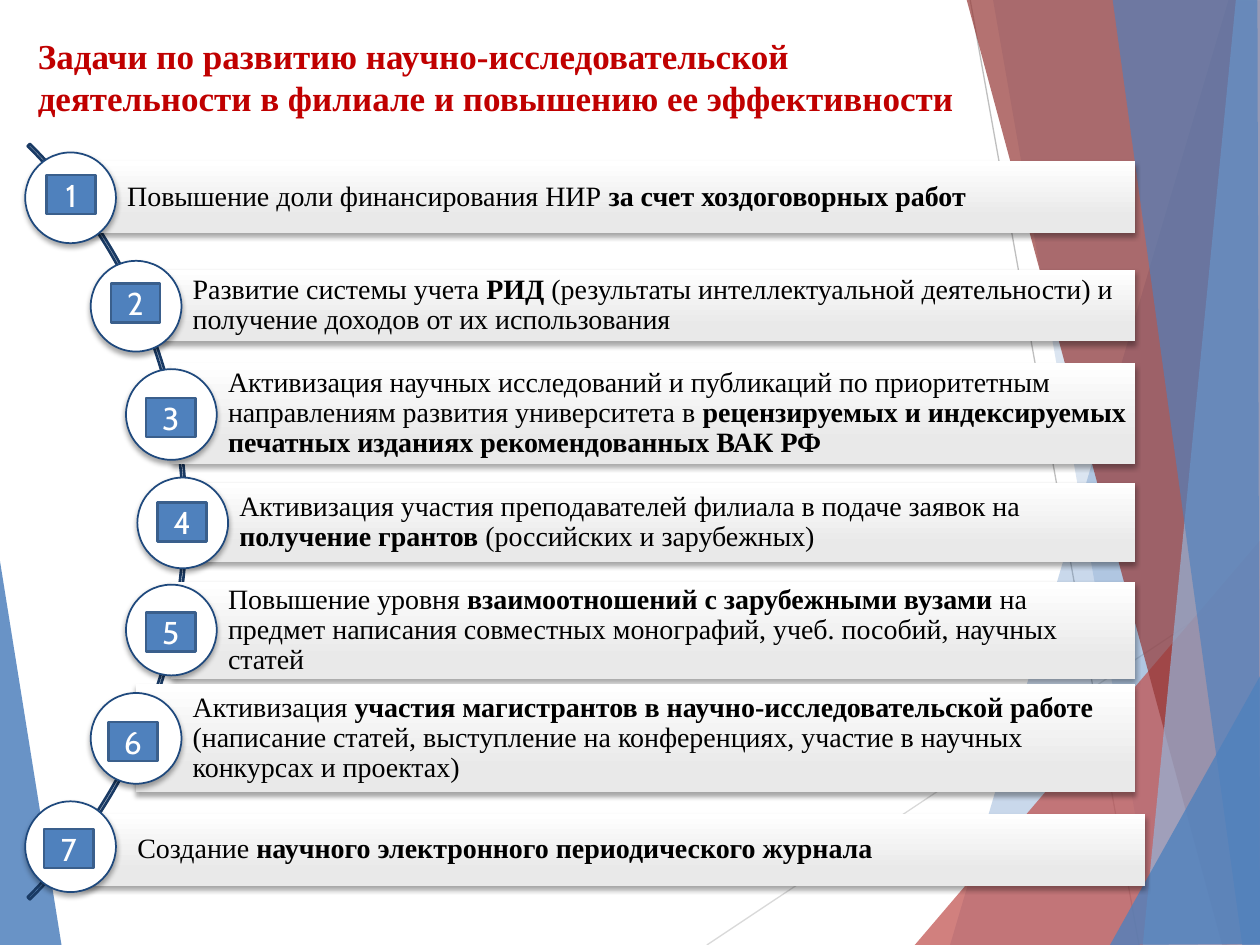
from dataclasses import dataclass

from lxml import etree
from pptx import Presentation
from pptx import util as u
from pptx.dml.color import RGBColor
from pptx.enum import shapes, text
from pptx.oxml import ns

PX = 9144  # EMU per px, 100 px to the inch

WHITE = RGBColor(0xFF, 0xFF, 0xFF)
BLACK = RGBColor(0x00, 0x00, 0x00)
BLUE = RGBColor(0x4F, 0x81, 0xBD)
PALE_BLUE = RGBColor(0x95, 0xB3, 0xD7)
RED = RGBColor(0xC0, 0x50, 0x4D)
DARK_RED = RGBColor(0x95, 0x37, 0x35)
TITLE_RED = RGBColor(0xC0, 0x00, 0x00)
ARC_NAVY = RGBColor(0x19, 0x3A, 0x64)
RING_NAVY = RGBColor(0x1F, 0x49, 0x7D)
BADGE_EDGE = RGBColor(0x3A, 0x5F, 0x8C)
BAR_GREY = RGBColor(0xE9, 0xE9, 0xE9)
RAY_LIGHT = RGBColor(0xD9, 0xD9, 0xD9)
RAY_GREY = RGBColor(0xBF, 0xBF, 0xBF)

SERIF = "Times New Roman"
RING = 72
BADGE_W, BADGE_H = 39, 31


@dataclass(frozen=True)
class Facet:
    color: RGBColor
    opacity: int
    points: tuple[tuple[int, int], ...]


@dataclass(frozen=True)
class Ray:
    start: tuple[int, int]
    end: tuple[int, int]
    color: RGBColor


@dataclass(frozen=True)
class Task:
    ring_left: int
    bar: tuple[int, int, int, int]
    badge: tuple[int, int]
    wording: tuple[str, ...]  # plain and bold by turns


LEFT_FACET = Facet(BLUE, 85, ((-1, 439), (49, 751), (-1, 750)))
RAYS = (
    Ray((561, 750), (1001, 457), RAY_LIGHT),
    Ray((770, 0), (904, 750), RAY_GREY),
)
RIGHT_FACETS = (
    Facet(BLUE, 30, ((975, 0), (754, 750), (1002, 751), (1001, 1))),
    Facet(BLUE, 20, ((788, -1), (919, 750), (1001, 750), (1001, -1))),
    Facet(RED, 72, ((726, 750), (1000, 429), (1001, 750))),
    Facet(DARK_RED, 70, ((767, -1), (970, 750), (1001, 749), (1001, -1))),
    Facet(PALE_BLUE, 70, ((981, -1), (907, 750), (1001, 750), (1000, -1))),
    Facet(BLUE, 65, ((883, -1), (986, 750), (1000, 750), (998, -1))),
    Facet(BLUE, 80, ((881, 750), (1001, 535), (1001, 749))),
)
TASKS = (
    Task(20, (56, 128, 845, 57), (37, 139),
         ("Повышение доли финансирования НИР ", "за счет хоздоговорных работ")),
    Task(72, (108, 214, 793, 57), (88, 225),
         ("Развитие системы учета ", "РИД",
          " (результаты интеллектуальной деятельности) и получение доходов от их использования")),
    Task(100, (136, 288, 765, 80), (116, 316),
         ("Активизация научных исследований и публикаций по приоритетным "
          "направлениям развития университета в ",
          "рецензируемых и индексируемых печатных изданиях рекомендованных ВАК РФ")),
    Task(109, (145, 383, 756, 63), (125, 399),
         ("Активизация участия преподавателей филиала в подаче заявок на ",
          "получение грантов ", "(российских и зарубежных)")),
    Task(100, (136, 462, 765, 77), (116, 486),
         ("Повышение уровня ", "взаимоотношений с зарубежными вузами ",
          "на предмет написания совместных монографий, учеб. пособий, научных статей")),
    Task(72, (108, 543, 793, 86), (86, 573),
         ("Активизация ", "участия магистрантов в научно-исследовательской работе ",
          "(написание статей, выступление на конференциях, участие в научных "
          "конкурсах и проектах)")),
    Task(20, (64, 646, 845, 57), (35, 658),
         ("Создание ", "научного электронного периодического журнала")),
)


def set_all(target, **values) -> None:
    for name, value in values.items():
        setattr(target, name, value)


def set_font(font, color: RGBColor, **values) -> None:
    set_all(font, **values)
    font.color.rgb = color


def paint(shape, fill: RGBColor, edge: RGBColor, width: float) -> None:
    shape.fill.solid()
    shape.fill.fore_color.rgb = fill
    shape.line.color.rgb = edge
    shape.line.width = u.Pt(width)


def add_preset(slide, kind, left: int, top: int, width: int, height: int):
    shape = slide.shapes.add_shape(kind, *(v * PX for v in (left, top, width, height)))
    shape.shadow.inherit = False
    return shape


def drop_shadow(shape) -> None:
    effects = shape.fill._xPr.find(ns.qn("a:effectLst"))
    shadow = etree.SubElement(effects, ns.qn("a:outerShdw"), blurRad=str(u.Pt(3)),
                              dist=str(u.Pt(2)), dir="5400000", rotWithShape="0")
    color = etree.SubElement(shadow, ns.qn("a:srgbClr"), val=str(BLACK))
    etree.SubElement(color, ns.qn("a:alpha"), val="35000")


def add_facet(slide, facet: Facet) -> None:
    builder = slide.shapes.build_freeform(*facet.points[0], scale=PX)
    builder.add_line_segments(facet.points[1:], close=True)
    shape = builder.convert_to_shape()
    shape.shadow.inherit = False
    shape.fill.solid()
    shape.fill.fore_color.rgb = facet.color
    shape.line.fill.background()
    color = shape.fill._xPr.find(ns.qn("a:solidFill"))[0]
    etree.SubElement(color, ns.qn("a:alpha"), val=str(facet.opacity * 1000))


def add_ray(slide, ray: Ray) -> None:
    line = slide.shapes.add_connector(shapes.MSO_CONNECTOR.STRAIGHT,
                                      *(v * PX for v in ray.start + ray.end))
    line.line.color.rgb = ray.color
    line.line.width = u.Pt(0.75)
    etree.SubElement(line._element.spPr, ns.qn("a:effectLst"))


def add_bar(slide, task: Task) -> None:
    bar = add_preset(slide, shapes.MSO_SHAPE.RECTANGLE, *task.bar)
    bar.fill.gradient()
    bar.fill.gradient_angle = 270
    for stop, color, position in zip(bar.fill.gradient_stops, (WHITE, BAR_GREY), (0, 0.78)):
        stop.color.rgb = color
        stop.position = position
    bar.line.fill.background()
    drop_shadow(bar)
    frame = bar.text_frame
    set_all(frame, word_wrap=True, vertical_anchor=text.MSO_ANCHOR.MIDDLE,
            margin_left=45 * PX, margin_top=4 * PX, margin_right=4 * PX, margin_bottom=4 * PX)
    paragraph = frame.paragraphs[0]
    set_all(paragraph, alignment=text.PP_ALIGN.LEFT, line_spacing=0.9)
    for i, words in enumerate(task.wording):
        run = paragraph.add_run()
        run.text = words
        set_font(run.font, BLACK, name=SERIF, size=u.Pt(16), bold=i % 2 == 1)


def add_task(slide, index: int, task: Task) -> None:
    add_bar(slide, task)
    # Rings stand at equal steps down the arc
    ring_top = 121 + round(index * 515 / (len(TASKS) - 1))
    ring = add_preset(slide, shapes.MSO_SHAPE.OVAL, task.ring_left, ring_top, RING, RING)
    paint(ring, WHITE, RING_NAVY, 1)
    drop_shadow(ring)
    badge = add_preset(slide, shapes.MSO_SHAPE.RECTANGLE, *task.badge, BADGE_W, BADGE_H)
    paint(badge, BLUE, BADGE_EDGE, 1.5)
    badge.text_frame.vertical_anchor = text.MSO_ANCHOR.MIDDLE
    number = badge.text_frame.paragraphs[0]
    number.alignment = text.PP_ALIGN.CENTER
    run = number.add_run()
    run.text = str(index + 1)
    set_font(run.font, WHITE, name="Cabin", size=u.Pt(18))


def add_title(slide) -> None:
    title = slide.shapes.title
    set_all(title, left=20 * PX, top=22 * PX, width=768 * PX, height=94 * PX)
    set_all(title.text_frame, word_wrap=True, vertical_anchor=text.MSO_ANCHOR.TOP)
    heading = title.text_frame.paragraphs[0]
    heading.alignment = text.PP_ALIGN.LEFT
    run = heading.add_run()
    run.text = ("Задачи по развитию научно-исследовательской деятельности "
                "в филиале и повышению ее эффективности")
    set_font(run.font, TITLE_RED, name=SERIF, size=u.Pt(20), bold=True)


def main() -> None:
    prs = Presentation()
    set_all(prs, slide_width=1000 * PX, slide_height=750 * PX)
    slide = prs.slides.add_slide(prs.slide_layouts[5])

    # Faceted backdrop
    add_facet(slide, LEFT_FACET)
    for ray in RAYS:
        add_ray(slide, ray)
    for facet in RIGHT_FACETS:
        add_facet(slide, facet)

    add_title(slide)

    # Arc that carries the tasks
    arc = add_preset(slide, shapes.MSO_SHAPE.BLOCK_ARC, -700, -10, 848, 848)
    for i, value in enumerate((189, 27, 0.003)):
        arc.adjustments[i] = value
    arc.fill.background()
    arc.line.color.rgb = ARC_NAVY
    arc.line.width = u.Pt(1.5)

    for index, task in enumerate(TASKS):
        add_task(slide, index, task)
    prs.save("out.pptx")


if __name__ == "__main__":
    main()
